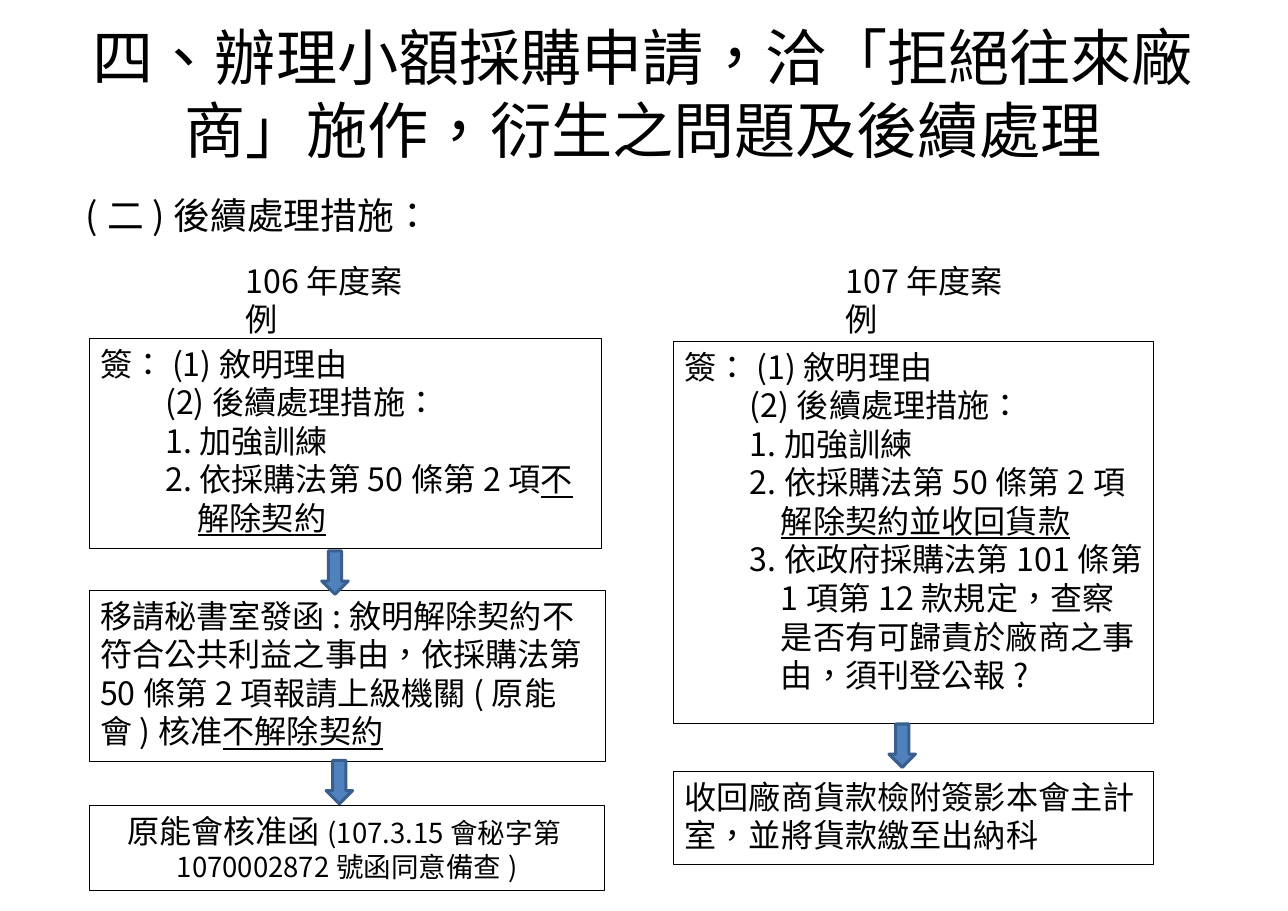
from dataclasses import dataclass

import pptx
import pptx.dml.color
import pptx.enum.shapes
import pptx.enum.text
import pptx.oxml
import pptx.oxml.ns
import pptx.util
from pptx.util import Cm

Align = pptx.enum.text.PP_ALIGN
Anchor = pptx.enum.text.MSO_ANCHOR
Preset = pptx.enum.shapes.MSO_SHAPE


@dataclass(frozen=True)
class Theme:
    font: str = "Noto Sans CJK SC"
    ink: str = "000000"
    arrow_fill: str = "4F81BD"
    arrow_line: str = "3A5F8C"
    title: int = 40
    subtitle: int = 24
    body: int = 21
    small: int = 18
    box_line: float = 0.75
    arrow_line_width: float = 2


THEME = Theme()


@dataclass(frozen=True)
class Span:
    text: str
    size: int = THEME.body
    underline: bool = False


@dataclass(frozen=True)
class Para:
    spans: tuple[Span, ...]
    margin: float = 0
    hanging: float = 0
    align: Align = Align.LEFT


@dataclass(frozen=True)
class Place:
    left: float
    top: float
    width: float
    height: float

    def lengths(self) -> tuple[int, ...]:
        return tuple(Cm(value) for value in (self.left, self.top, self.width, self.height))


@dataclass(frozen=True)
class Box:
    place: Place
    paras: tuple[Para, ...]


def plain(text: str, size: int = THEME.body, margin: float = 0) -> Para:
    return Para((Span(text, size),), margin)


def memo(hanging: float, *measures: tuple[Span, ...]) -> tuple[Para, ...]:
    """The opening lines shared by both memos, then the numbered measures."""
    return (
        plain("簽：(1)敘明理由"),
        plain("(2)後續處理措施：", margin=1.5),
        plain("1.加強訓練", margin=1.5),
        *(Para(spans, 1.5 + hanging, hanging) for spans in measures),
    )


# Content of the two case columns
LABELS = (
    Box(Place(5.41, 5.89, 4.6, 1.17), (plain("106年度案例"),)),
    Box(Place(19.25, 5.89, 4.7, 1.22), (plain("107年度案例"),)),
)
BOXES = (
    Box(Place(2.06, 7.8, 11.81, 4.85), memo(
        0.75,
        (Span("2.依採購法第50條第2項"), Span("不解除契約", underline=True)),
    )),
    Box(Place(2.06, 13.61, 11.91, 3.94), (Para((
        Span("移請秘書室發函:敘明解除契約不符合公共利益之事由，"
             "依採購法第50條第2項報請上級機關(原能會)核准"),
        Span("不解除契約", underline=True),
    )),)),
    Box(Place(2.06, 18.57, 11.89, 1.96), (Para((
        Span("原能會核准函"),
        Span("(107.3.15會秘字第1070002872號函同意備查)", THEME.small),
    ), align=Align.CENTER),)),
    Box(Place(15.54, 7.87, 11.07, 8.81), memo(
        0.72,
        (Span("2.依採購法第50條第2項"), Span("解除契約並收回貨款", underline=True)),
        (Span("3.依政府採購法第101條第1項第12款規定，"
              "查察是否有可歸責於廠商之事由，須刊登公報?"),),
    )),
    Box(Place(15.54, 17.78, 11.07, 2.16),
        (plain("收回廠商貨款檢附簽影本會主計室，並將貨款繳至出納科"),)),
)
ARROWS = (
    Place(7.42, 12.7, 0.61, 1),
    Place(7.52, 17.53, 0.61, 1),
    Place(20.5, 16.69, 0.61, 1),
)


def color(value: str) -> pptx.dml.color.RGBColor:
    return pptx.dml.color.RGBColor.from_string(value)


def write(shape, paras: tuple[Para, ...], anchor: Anchor = Anchor.TOP,
          inset_x: float = 0.25, inset_y: float = 0.13) -> None:
    frame = shape.text_frame
    frame.word_wrap = True
    frame.auto_size = pptx.enum.text.MSO_AUTO_SIZE.NONE
    frame.vertical_anchor = anchor
    frame.margin_left = frame.margin_right = Cm(inset_x)
    frame.margin_top = frame.margin_bottom = Cm(inset_y)
    for index, para in enumerate(paras):
        paragraph = frame.add_paragraph() if index else frame.paragraphs[0]
        paragraph.alignment = para.align
        properties = paragraph._p.get_or_add_pPr()
        properties.set("marL", str(Cm(para.margin)))
        properties.set("indent", str(-Cm(para.hanging)))
        for span in para.spans:
            run = paragraph.add_run()
            run.text = span.text
            run.font.size = pptx.util.Pt(span.size)
            run.font.color.rgb = color(THEME.ink)
            run.font.name = THEME.font
            if span.underline:
                run.font.underline = True
            # East Asian typeface and language
            run_properties = run._r.get_or_add_rPr()
            run_properties.set("lang", "zh-TW")
            typeface = pptx.oxml.parse_xml(
                f'<a:ea {pptx.oxml.ns.nsdecls("a")} typeface="{THEME.font}"/>')
            run_properties.append(typeface)


def draw_text(page, box: Box) -> None:
    write(page.shapes.add_textbox(*box.place.lengths()), box.paras)


def draw_box(page, box: Box) -> None:
    shape = page.shapes.add_shape(Preset.RECTANGLE, *box.place.lengths())
    shape.shadow.inherit = False
    shape.fill.background()
    shape.line.color.rgb = color(THEME.ink)
    shape.line.width = pptx.util.Pt(THEME.box_line)
    write(shape, box.paras)


def draw_arrow(page, place: Place) -> None:
    shape = page.shapes.add_shape(Preset.DOWN_ARROW, *place.lengths())
    shape.shadow.inherit = False
    shape.fill.solid()
    shape.fill.fore_color.rgb = color(THEME.arrow_fill)
    shape.line.color.rgb = color(THEME.arrow_line)
    shape.line.width = pptx.util.Pt(THEME.arrow_line_width)


def main() -> None:
    deck = pptx.Presentation()
    deck.slide_width, deck.slide_height = Cm(29.7), Cm(21)
    page = deck.slides.add_slide(deck.slide_layouts[5])

    # Title and subtitle
    title = page.shapes.title
    title.left, title.top, title.width, title.height = Place(1.45, 0.51, 26.75, 3.25).lengths()
    heading = "四、辦理小額採購申請，洽「拒絕往來廠商」施作，衍生之問題及後續處理"
    write(title, (Para((Span(heading, THEME.title),), align=Align.CENTER),),
          Anchor.MIDDLE, 0.28, 0.15)
    subtitle = page.shapes.add_textbox(*Place(1.7, 4.06, 8.41, 1.8).lengths())
    write(subtitle, (plain("(二)後續處理措施：", THEME.subtitle),), Anchor.MIDDLE, 0.28, 0.15)

    # Case columns
    for label in LABELS:
        draw_text(page, label)
    for box in BOXES:
        draw_box(page, box)
    for arrow in ARROWS:
        draw_arrow(page, arrow)

    deck.save("out.pptx")


if __name__ == "__main__":
    main()
